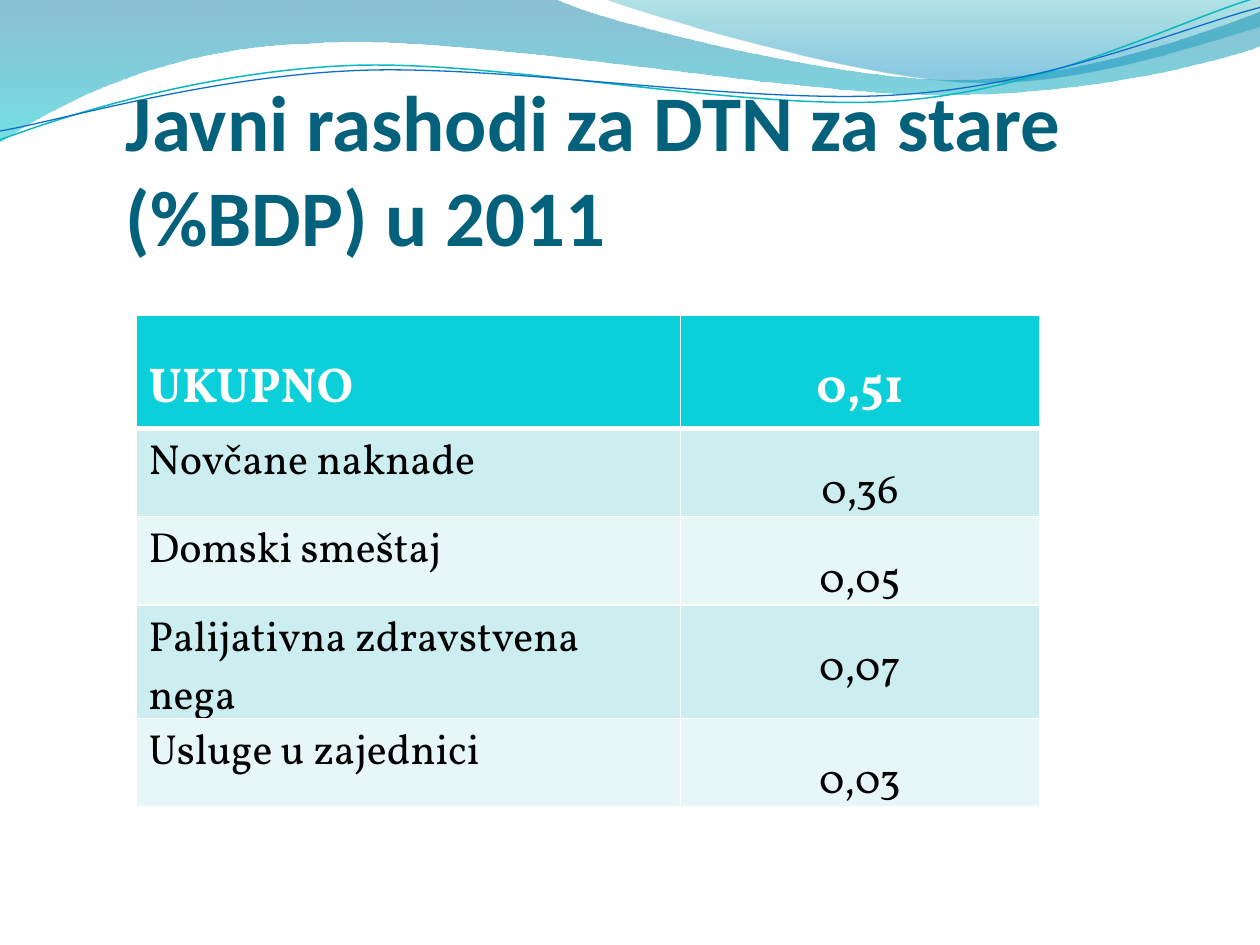
import math

import lxml.etree
import pptx
import pptx.dml.color
import pptx.enum.text
import pptx.oxml.ns
import pptx.util

Inches = pptx.util.Inches
qn = pptx.oxml.ns.qn
ALIGN = pptx.enum.text.PP_ALIGN
TILT = -2.7

BANDS = [
    ([(0, 0), (4.4, -0.01), [(4.76, 0.17), (6.64, 0.63), (7.58, 0.63)],
      [(8.53, 0.63), (9.58, 0.26), (10, 0.09)], (10.01, 0.36),
      [(9.83, 0.44), (8.7, 0.76), (7.46, 0.75)],
      [(6.22, 0.75), (3.82, 0.28), (2.57, 0.34)],
      [(1.29, 0.36), (0.46, 0.83), (-0.01, 1.13)], (0, 0)],
     [(0, "0074A1", 45), (1, "00C6CF", 55)]),
    ([(4.79, -0.01), [(5.09, 0.11), (6.82, 0.62), (7.69, 0.65)],
      [(8.56, 0.69), (9.61, 0.32), (10, 0.21)], (10, 0), (4.79, -0.01)],
     [(0, "00A1A9", 30), (0.8, "008BBF", 45)]),
]
STROKES = [
    ([(0, 1.11), [(0.48, 0.93), (1.58, 0.57), (2.77, 0.52)],
      [(3.95, 0.47), (5.93, 0.89), (7.13, 0.8)],
      [(8.33, 0.71), (9.38, 0.15), (9.98, -0.02)]], (4.99, 0.58), "0AB8BF", 0.85),
    ([(0, 1.04), [(0.47, 0.96), (1.64, 0.61), (2.83, 0.56)],
      [(4.03, 0.51), (5.97, 0.84), (7.17, 0.75)],
      [(8.36, 0.67), (9.41, 0.21), (10, 0.06)]], (5, 0.59), "0F6FC6", 0.75),
]
ROWS = [
    ("UKUPNO", "0,51"),
    ("Novčane naknade", "0,36"),
    ("Domski smeštaj", "0,05"),
    ("Palijativna zdravstvena nega", "0,07"),
    ("Usluge u zajednici", "0,03"),
]


def color(value):
    """Turn a hex string into a colour."""
    return pptx.dml.color.RGBColor.from_string(value)


def level(point, center):
    """Turn a point about a centre so that the tilt is undone."""
    angle = math.radians(-TILT)
    dx, dy = point[0] - center[0], point[1] - center[1]
    return (center[0] + dx * math.cos(angle) - dy * math.sin(angle),
            center[1] + dx * math.sin(angle) + dy * math.cos(angle))


def add_outline(page, left, top, outline, closed):
    """Draw an outline of lines and cubic curves without shadow."""
    parts = [part if isinstance(part, list) else [part] for part in outline]
    points = [(Inches(x), Inches(y)) for part in parts for x, y in part]
    builder = page.shapes.build_freeform(*points[0])
    builder.add_line_segments(points[1:], close=closed)
    shape = builder.convert_to_shape(left, top)
    shape.shadow.inherit = False
    segments = iter(list(shape.element.iter(qn("a:lnTo"))))
    for part in parts[1:]:
        group = [next(segments) for _ in part]
        if len(group) == 3:
            curve = lxml.etree.Element(qn("a:cubicBezTo"))
            group[0].addprevious(curve)
            for segment in group:
                curve.append(segment[0])
                segment.getparent().remove(segment)
    return shape


def add_waves(page, left, top):
    """Draw the translucent bands and thin strokes of the header."""
    for outline, stops in BANDS:
        band = add_outline(page, left, top, outline, True)
        band.line.fill.background()
        band.fill.gradient()
        band.fill.gradient_angle = 270
        for stop, (position, tint, _) in zip(band.fill.gradient_stops, stops):
            stop.position = position
            stop.color.rgb = color(tint)
        for node, (_, _, opacity) in zip(band.element.spPr.iter(qn("a:srgbClr")), stops):
            lxml.etree.SubElement(node, qn("a:alpha"), val=str(opacity * 1000))
    for outline, center, tint, width in STROKES:
        flat = [[level(point, center) for point in part] if isinstance(part, list)
                else level(part, center) for part in outline]
        stroke = add_outline(page, left, top, flat, False)
        stroke.rotation = TILT
        stroke.fill.background()
        stroke.line.color.rgb = color(tint)
        stroke.line.width = pptx.util.Pt(width)


def format_text(para, font, size, tint, bold):
    """Set the font of every run in a paragraph."""
    for span in para.runs:
        span.font.name = font
        span.font.size = pptx.util.Pt(size)
        span.font.color.rgb = color(tint)
        span.font.bold = bold


def add_title(page, left, top, width, height):
    """Write the heading at the bottom of its box."""
    box = page.shapes.add_textbox(left, top, width, height)
    frame = box.text_frame
    frame.word_wrap = True
    frame.vertical_anchor = pptx.enum.text.MSO_ANCHOR.BOTTOM
    frame.margin_left = frame.margin_right = frame.margin_bottom = 0
    frame.margin_top = Inches(0.05)
    frame.text = "Javni rashodi za DTN za stare (%BDP) u 2011"
    format_text(frame.paragraphs[0], "Calibri", 45, "04617B", True)


def add_borders(cell, widths):
    """Give a cell white borders with a width in points for each side."""
    properties = cell._tc.get_or_add_tcPr()
    for side, width in widths.items():
        line = lxml.etree.SubElement(properties, qn(f"a:ln{side}"),
                                     w=str(pptx.util.Pt(width)))
        fill = lxml.etree.SubElement(line, qn("a:solidFill"))
        lxml.etree.SubElement(fill, qn("a:srgbClr"), val="FFFFFF")


def add_spending_table(page, left, top, width, height):
    """Build the table of spending with a header and banded rows."""
    label_width = Inches(4.32)
    holder = page.shapes.add_table(len(ROWS), 2, left, top, width, height)
    table = holder.table
    table.columns[0].width = label_width
    table.columns[1].width = width - label_width
    for index, texts in enumerate(ROWS):
        header = index == 0
        table.rows[index].height = Inches(0.9 if header else 0.59)
        tint = "0BD0D9" if header else ("CCEEF1" if index % 2 else "E7F7F8")
        borders = {"L": 1, "R": 1, "T": 1, "B": 3 if header else 1}
        for column, text in enumerate(texts):
            cell = table.cell(index, column)
            add_borders(cell, borders)
            cell.fill.solid()
            cell.fill.fore_color.rgb = color(tint)
            cell.text_frame.text = text
            para = cell.text_frame.paragraphs[0]
            para.alignment = ALIGN.CENTER if column else ALIGN.LEFT
            if header or column:
                para.line_spacing = 1.5
            if header and not column:
                para.space_before = pptx.util.Pt(6)
            format_text(para, "Vollkorn", 28 if header else 24,
                        "FFFFFF" if header else "000000", header)
    holder.height = height


def main():
    """Build and save the slide."""
    deck = pptx.Presentation()
    deck.slide_width, deck.slide_height = Inches(10), Inches(7.5)
    page = deck.slides.add_slide(deck.slide_layouts[6])
    add_waves(page, Inches(0), Inches(0))
    add_title(page, Inches(1), Inches(0.83), Inches(9), Inches(1.25))
    add_spending_table(page, Inches(1.08), Inches(2.5), Inches(7.17), Inches(3.7))
    deck.save("out.pptx")


if __name__ == "__main__":
    main()
